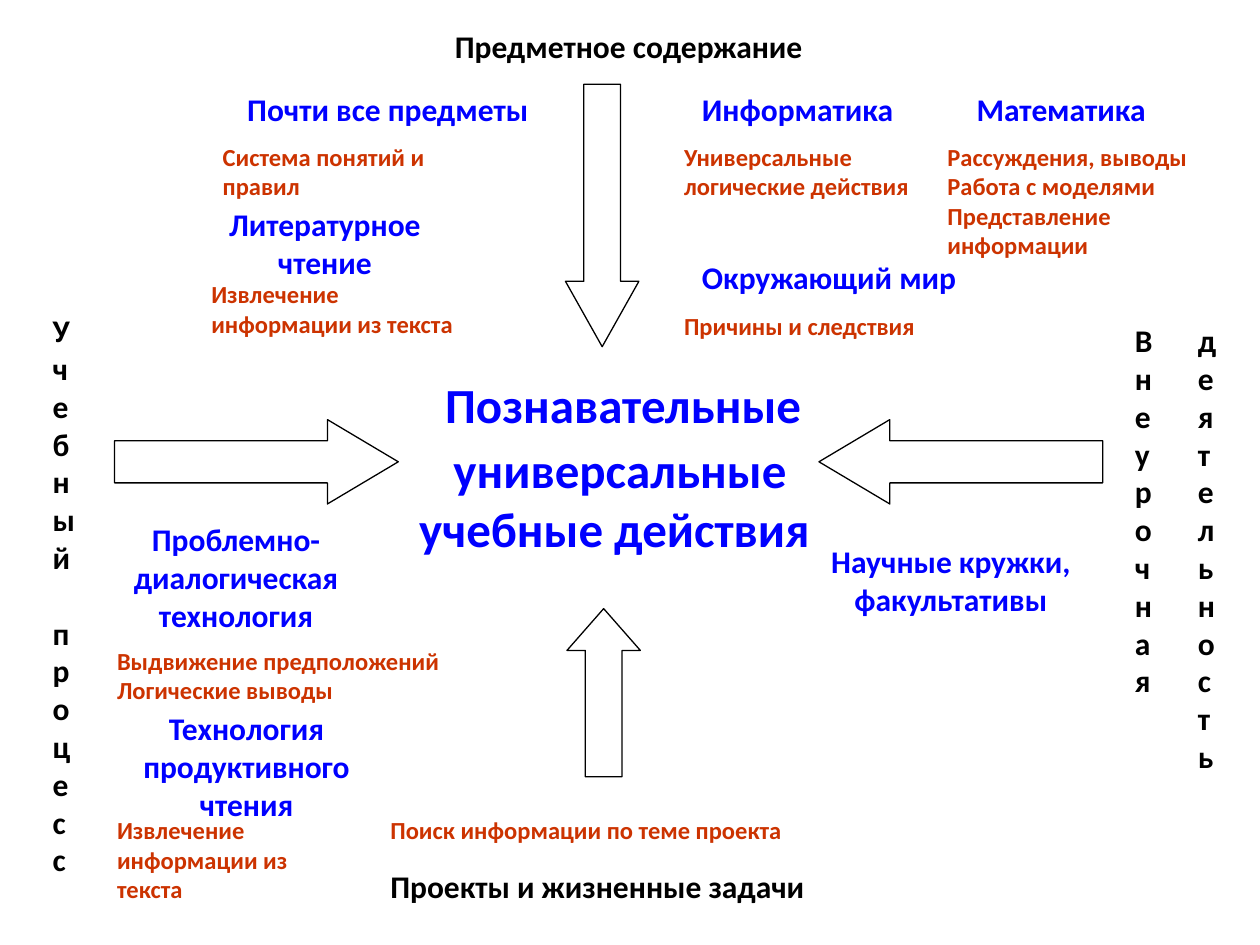
from pptx import Presentation
from pptx.dml.color import RGBColor
from pptx.enum.shapes import MSO_SHAPE
from pptx.enum.text import MSO_ANCHOR, PP_ALIGN
from pptx.util import Cm, Pt

LEFT, MID = PP_ALIGN.LEFT, PP_ALIGN.CENTER
TOP, CORE = MSO_ANCHOR.TOP, MSO_ANCHOR.MIDDLE
EAST, WEST = MSO_SHAPE.RIGHT_ARROW, MSO_SHAPE.LEFT_ARROW
NORTH, SOUTH = MSO_SHAPE.UP_ARROW, MSO_SHAPE.DOWN_ARROW

THEME = {
    "font": "Calibri",
    "ink": RGBColor(0, 0, 0),
    "blue": RGBColor(0, 0, 255),
    "rust": RGBColor(204, 51, 0),
    "gap": Pt(44),
    "big": Pt(28),
    "head": Pt(18),
    "note": Pt(14),
}

deck = Presentation()
deck.slide_width, deck.slide_height = Cm(25.4), Cm(19.05)
slide = deck.slides.add_slide(deck.slide_layouts[6])


def write(text, box, size="head", color="ink", align=LEFT, anchor=TOP, lead=""):
    frame = slide.shapes.add_textbox(*map(Cm, box)).text_frame
    frame.word_wrap = True
    frame.vertical_anchor = anchor
    frame.text = lead + text if not lead else ""
    if lead:
        para = frame.paragraphs[0]
        run = para.add_run()
        run.text = lead
        run.font.size = THEME["gap"]
        for i, line in enumerate(text.split("\n")):
            if i:
                para.add_line_break()
            para.add_run().text = line
    for para in frame.paragraphs:
        para.alignment = align
        for run in para.runs:
            font = run.font
            font.name, font.bold = THEME["font"], True
            font.size = font.size or THEME[size]
            font.color.rgb = THEME[color]


write("Познавательные\n универсальные учебные действия", (7.62, 7.42, 9.53, 3.38),
      size="big", color="blue", align=MID, anchor=CORE, lead=" ")

write("Предметное содержание", (6.96, 0.43, 11.43, 1.02), align=MID)
write("Проекты и жизненные задачи", (7.62, 17.35, 10.36, 1.02))

sides = [
    ("Учебный процесс", (0.81, 6.15, 0.84, 11.71)),
    ("Внеурочная", (22.63, 6.35, 0.84, 7.87)),
    ("деятельность", (23.9, 6.35, 0.84, 9.4)),
]
for text, box in sides:
    write(text, box)

arrows = [
    (EAST, (2.31, 8.46, 5.72, 1.7), 0.84),
    (WEST, (16.51, 8.46, 5.72, 1.7), 0.84),
    (NORTH, (11.43, 12.27, 1.48, 3.39), 0.57),
    (SOUTH, (11.4, 1.7, 1.48, 5.29), 0.89),
]
for kind, box, tip in arrows:
    arrow = slide.shapes.add_shape(kind, *map(Cm, box))
    arrow.adjustments[0], arrow.adjustments[1] = 0.5, tip
    arrow.shadow.inherit = False
    arrow.fill.background()
    arrow.line.color.rgb = THEME["ink"]
    arrow.line.width = Pt(0.75)

heads = [
    ("Почти все предметы", (4.01, 1.7, 7.62, 1.02)),
    ("Литературное чтение", (4.01, 4.01, 5.08, 1.78)),
    ("Информатика", (13.54, 1.7, 5.08, 1.02)),
    ("Математика", (18.85, 1.7, 5.08, 1.02)),
    ("Окружающий мир", (13.54, 5.08, 6.35, 1.02)),
    ("Проблемно-диалогическая технология", (1.9, 10.36, 5.72, 2.54)),
    ("Технология продуктивного чтения", (2.11, 14.17, 5.72, 2.54)),
    ("Научные кружки, факультативы", (16.31, 10.8, 5.72, 2.54)),
]
for text, box in heads:
    write(text, box, color="blue", align=MID)

notes = [
    ("Система понятий и правил", (4.24, 2.74, 5.72, 1.45)),
    ("Извлечение информации из текста", (4.01, 5.51, 5.72, 2.03)),
    ("Универсальные логические действия", (13.54, 2.74, 5.72, 2.03)),
    ("Рассуждения, выводы\nРабота с моделями\nПредставление информации",
     (18.85, 2.74, 6.35, 2.62)),
    ("Причины и следствия", (13.54, 6.15, 6.35, 0.84)),
    ("Выдвижение предположений\nЛогические выводы", (2.11, 12.9, 8.05, 1.45)),
    ("Извлечение информации из текста", (2.11, 16.31, 5.28, 2.03)),
    ("Поиск информации по теме проекта", (7.62, 16.31, 9.96, 0.84)),
]
for text, box in notes:
    write(text, box, size="note", color="rust")

deck.save("out.pptx")
